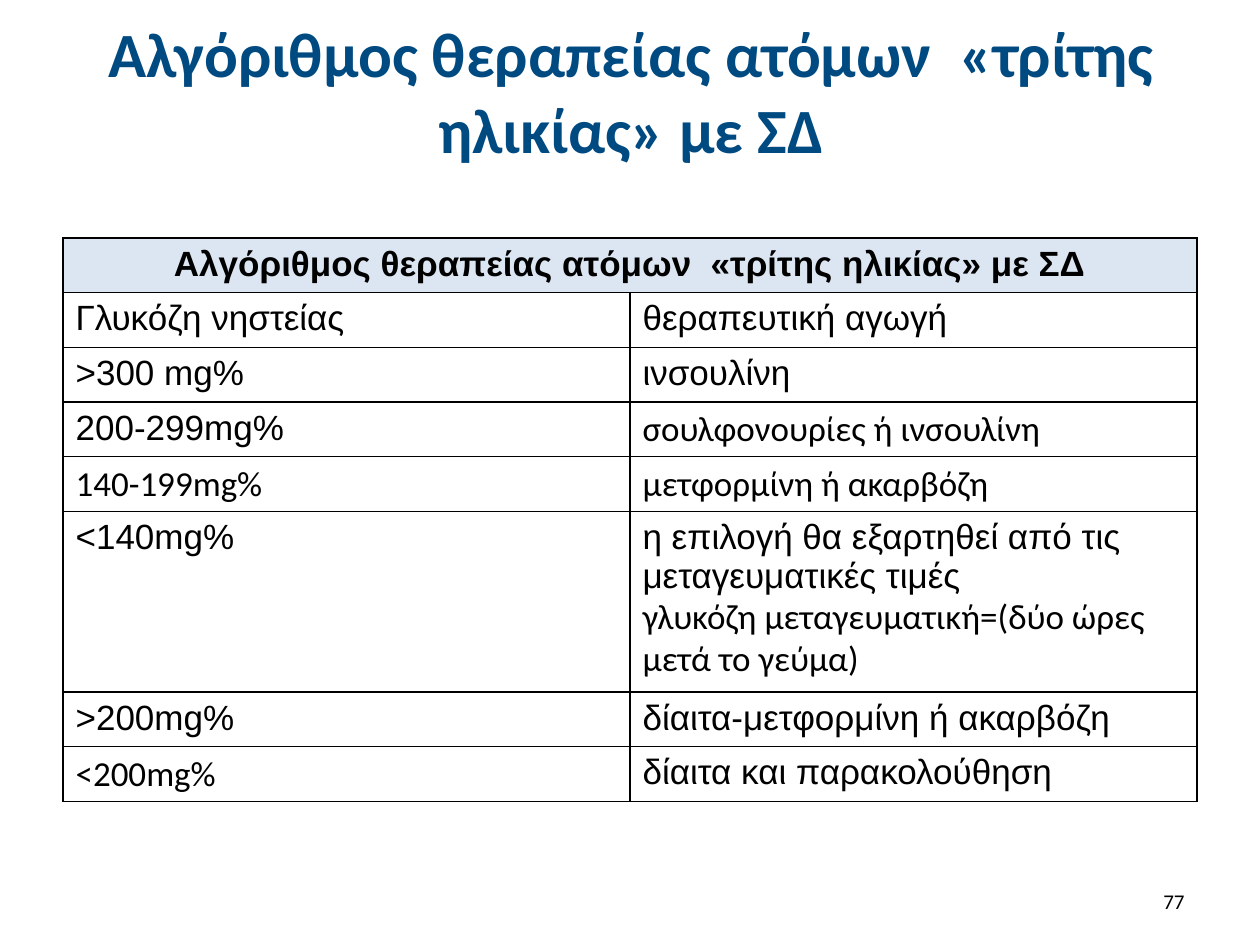
from lxml import etree
from pptx import Presentation
from pptx.dml.color import RGBColor
from pptx.enum.text import MSO_ANCHOR, PP_ALIGN
from pptx.oxml.ns import qn
from pptx.util import Pt

PX = 914400 // 126
MID = MSO_ANCHOR.MIDDLE
LEFT, CENTER, RIGHT = PP_ALIGN.LEFT, PP_ALIGN.CENTER, PP_ALIGN.RIGHT
BLACK, NAVY, PALE = "000000", "004A82", "DCE6F2"
SANS, BODY = "Arial", "Calibri"
TITLE = "Αλγόριθμος θεραπείας ατόμων  «τρίτης ηλικίας» με ΣΔ"
ROW_H = 52
ROWS = [
    ([("Γλυκόζη νηστείας", SANS)], [("θεραπευτική αγωγή", SANS)]),
    ([(">300 mg%", SANS)], [("ινσουλίνη", SANS)]),
    ([("200-299mg%", SANS)], [("σουλφονουρίες ή ινσουλίνη", BODY)]),
    ([("140-199mg%", BODY)], [("μετφορμίνη ή ακαρβόζη", BODY)]),
    ([("<140mg%", SANS)],
     [("η επιλογή θα εξαρτηθεί από τις μεταγευματικές τιμές", SANS),
      ("γλυκόζη μεταγευματική=(δύο ώρες μετά το γεύμα)", BODY)]),
    ([(">200mg%", SANS)], [("δίαιτα-μετφορμίνη ή ακαρβόζη", SANS)]),
    ([("<200mg%", BODY)], [("δίαιτα και παρακολούθηση", SANS)]),
]


def paint(code):
    """Turn a hex string into a colour."""
    return RGBColor.from_string(code)


def write(frame, lines, size, color=BLACK, bold=False, align=LEFT):
    """Fill a text frame with (text, font) lines."""
    for i, (text, face) in enumerate(lines):
        para = frame.add_paragraph() if i else frame.paragraphs[0]
        para.text = text
        para.alignment = align
        font = para.font
        font.name, font.size, font.bold = face, Pt(size), bold
        font.color.rgb = paint(color)


def add_text(slide, box, text, size, **style):
    """Add a wrapped, vertically centred text box."""
    frame = slide.shapes.add_textbox(*(n * PX for n in box)).text_frame
    frame.word_wrap = True
    frame.vertical_anchor = MID
    write(frame, [(text, BODY)], size, **style)


def edge(cell):
    """Draw a thin black border on every side of a cell."""
    props = cell._tc.get_or_add_tcPr()
    for side in ("lnL", "lnR", "lnT", "lnB"):
        line = etree.SubElement(props, qn("a:" + side), w=str(Pt(1)))
        fill = etree.SubElement(line, qn("a:solidFill"))
        etree.SubElement(fill, qn("a:srgbClr"), val=BLACK)


def add_grid(slide, box):
    """Add the therapy table with its merged heading."""
    count = len(ROWS) + 1
    grid = slide.shapes.add_table(count, 2, *(n * PX for n in box)).table
    grid.horz_banding = False
    for cell in grid.iter_cells():
        edge(cell)
        cell.fill.background()
    head = grid.cell(0, 0)
    head.merge(grid.cell(0, 1))
    head.fill.solid()
    head.fill.fore_color.rgb = paint(PALE)
    write(head.text_frame, [(TITLE, SANS)], 20, bold=True, align=CENTER)
    for r, row in enumerate(ROWS, 1):
        for c, lines in enumerate(row):
            write(grid.cell(r, c).text_frame, lines, 20)


def main():
    """Build and save the slide."""
    deck = Presentation()
    deck.slide_width, deck.slide_height = 1260 * PX, 945 * PX
    slide = deck.slides.add_slide(deck.slide_layouts[6])
    add_text(slide, (64, 16, 1134, 149), TITLE, 36,
             color=NAVY, bold=True, align=CENTER)
    add_grid(slide, (63, 238, 1134, ROW_H * (len(ROWS) + 1)))
    add_text(slide, (903, 876, 294, 50), "77", 12, align=RIGHT)
    deck.save("out.pptx")


if __name__ == "__main__":
    main()
